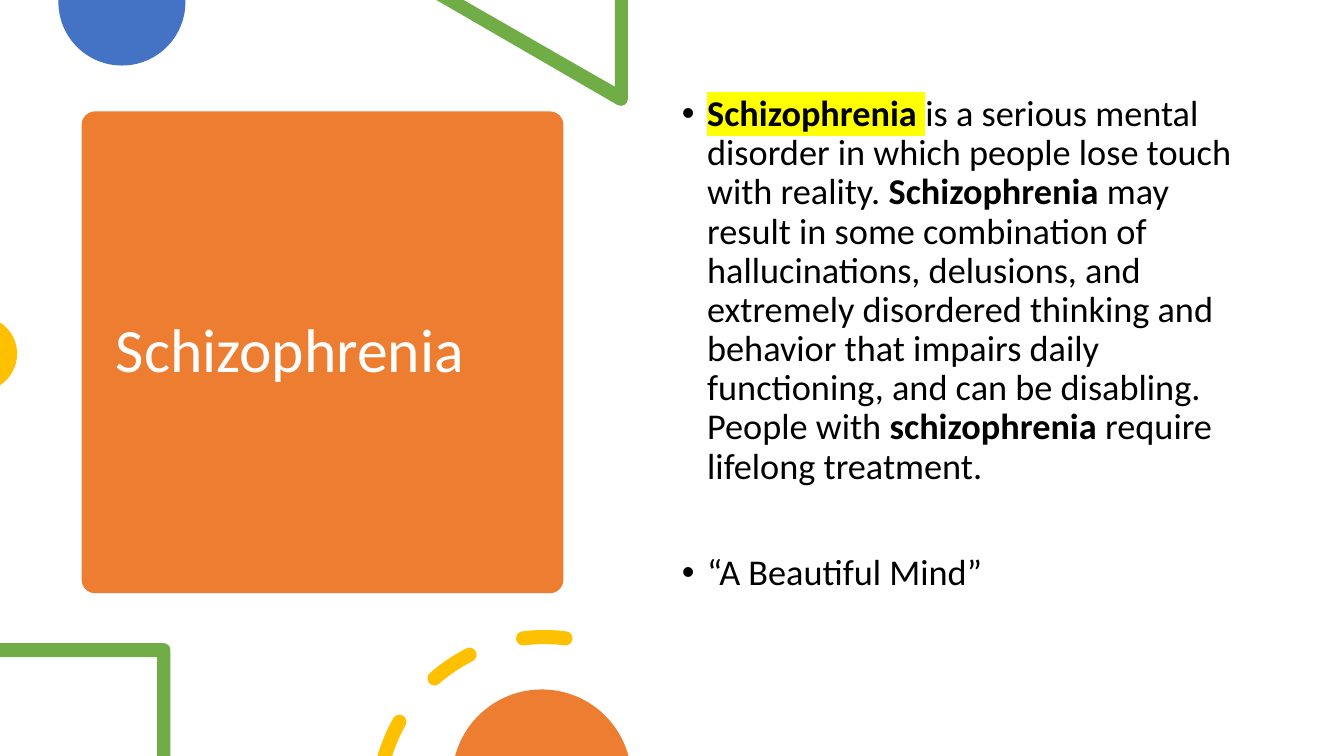
from math import ceil, cos, radians, sin, tan

from lxml import etree
from pptx import Presentation
from pptx import util as u
from pptx.dml.color import RGBColor
from pptx.enum import shapes, text
from pptx.oxml import ns

COLORS = {
    "orange": "ED7D31",
    "blue": "4472C4",
    "green": "70AD47",
    "gold": "FFC000",
    "white": "FFFFFF",
    "black": "000000",
    "yellow": "FFFF00",
}
COLUMNS, ROWS = 1333.33, 750  # fine square grid, 100 cells to the inch


def arc(x, y, radius, start, end):
    """Start point and Bézier curves (six numbers each), clockwise from the top."""
    count = ceil(abs(end - start) / 90)
    step = radians((end - start) / count)
    pull = 4 / 3 * tan(step / 4)

    def point(angle, reach):
        return (x + radius * (sin(angle) + reach * cos(angle)),
                y - radius * (cos(angle) - reach * sin(angle)))

    angles = [radians(start) + step * i for i in range(count)]
    curves = [point(a, pull) + point(a + step, -pull) + point(a + step, 0)
              for a in angles]
    return [point(radians(start), 0)] + curves


def add_text(paragraph, content, size=18, color="black", bold=False, highlight=None):
    run = paragraph.add_run()
    run.text = content
    run.font.size = u.Pt(size)
    run.font.bold = bold
    run.font.color.rgb = RGBColor.from_string(COLORS[color])
    if highlight:
        mark = etree.Element(ns.qn("a:highlight"))
        etree.SubElement(mark, ns.qn("a:srgbClr"), val=COLORS[highlight])
        run.font.fill._xPr.find(ns.qn("a:solidFill")).addnext(mark)
    run.font.name = "Calibri"


class SlideBuilder:
    def __init__(self, presentation):
        presentation.slide_width = self.length(COLUMNS)
        presentation.slide_height = self.length(ROWS)
        self.slide = presentation.slides.add_slide(presentation.slide_layouts[6])

    def length(self, cells):
        return u.Inches(cells / 100)

    def paint(self, shape, color):
        shape.shadow.inherit = False
        shape.fill.solid()
        shape.fill.fore_color.rgb = RGBColor.from_string(COLORS[color])
        shape.line.fill.background()

    def card(self, column, row, width, height, color, rounding):
        box = map(self.length, (column, row, width, height))
        shape = self.slide.shapes.add_shape(shapes.MSO_SHAPE.ROUNDED_RECTANGLE, *box)
        shape.adjustments[0] = rounding
        self.paint(shape, color)

    def outline(self, color, *contours):
        """Freeform from points (two numbers) and Bézier curves (six numbers)."""
        builder = None
        for start, *segments in contours:
            origin = [self.length(value) for value in start]
            if builder:
                builder.move_to(*origin)
            else:
                builder = self.slide.shapes.build_freeform(*origin)
            values = [self.length(value) for segment in segments for value in segment]
            builder.add_line_segments(list(zip(values[::2], values[1::2])), close=True)
        shape = builder.convert_to_shape()
        self.bend(shape, [segment for contour in contours for segment in contour[1:]])
        self.paint(shape, color)

    def bend(self, shape, segments):
        """Join the three points of each curve into one Bézier element."""
        lines = iter(list(shape._element.iter(ns.qn("a:lnTo"))))
        for segment in segments:
            line = next(lines)
            if len(segment) == 6:
                line.tag = ns.qn("a:cubicBezTo")
                for _ in range(2):
                    extra = next(lines)
                    line.append(extra[0])
                    extra.getparent().remove(extra)

    def text_box(self, column, row, width, height, anchor):
        box = map(self.length, (column, row, width, height))
        frame = self.slide.shapes.add_textbox(*box).text_frame
        frame.word_wrap = True
        frame.vertical_anchor = anchor
        return frame

    def title(self, column, row, width, height, content):
        frame = self.text_box(column, row, width, height, text.MSO_ANCHOR.MIDDLE)
        frame.paragraphs[0].line_spacing = 0.9
        add_text(frame.paragraphs[0], content, size=44, color="white")

    def bullets(self, column, row, width, height, items, gap):
        frame = self.text_box(column, row, width, height, text.MSO_ANCHOR.TOP)
        for index, runs in enumerate(items):
            paragraph = frame.add_paragraph() if index else frame.paragraphs[0]
            paragraph.line_spacing = 0.9
            paragraph.space_before = u.Pt(gap if index else 0)
            properties = paragraph._p.get_or_add_pPr()
            properties.set("marL", str(self.length(25)))
            properties.set("indent", str(-self.length(25)))
            etree.SubElement(properties, ns.qn("a:buFont"), typeface="Arial")
            etree.SubElement(properties, ns.qn("a:buChar"), char="•")
            for content, style in runs:
                add_text(paragraph, content, size=25.9, **style)


def ring_dash(start, end, cut=None):
    """Dash on the ring, round at its end and, unless cut, at its start."""
    x, y, radius, half = 540, 797, 165, 7

    def cap(angle, turn):
        spot = arc(x, y, radius, angle, angle + 1)[0]
        return arc(*spot, half, angle + turn, angle + turn + 180)[1:]

    inner_start = start if cut is None else cut
    dash = arc(x, y, radius + half, start, end) + cap(end, 0)
    dash += arc(x, y, radius - half, end, inner_start)[1:]
    return dash + (cap(start, 180) if cut is None else [])


def main():
    presentation = Presentation()
    builder = SlideBuilder(presentation)

    # Title card
    builder.card(81, 110.5, 478, 478, "orange", rounding=0.028)
    builder.title(105, 122, 431, 456, "Schizophrenia")

    # Decorations along the top and left edges
    builder.outline("blue", [(184, 0), *arc(121, 2, 63, 90, 270), (58, 0)])
    builder.outline("green", [(623, 0), *arc(616, 98, 7, 90, 210),
                              (433, 0), (460, 0), (610, 86), (610, 0)])
    builder.outline("gold", arc(-20, 351, 37, 32.7, 147.3))

    # Description
    bold = {"bold": True}
    description = [
        ("Schizophrenia", {"bold": True, "highlight": "yellow"}),
        (" ", {"highlight": "yellow"}),
        ("is a serious mental disorder in which people lose touch with reality. ", {}),
        ("Schizophrenia", bold),
        (" may result in some combination of hallucinations, delusions, and "
         "extremely disordered thinking and behavior that impairs daily "
         "functioning, and can be disabling. People with ", {}),
        ("schizophrenia", bold),
        (" require lifelong treatment.", {}),
    ]
    film = [("“A Beautiful Mind”", {})]
    builder.bullets(666.7, 89.6, 575, 535, [description, film], gap=48)

    # Decorations along the bottom edge
    builder.outline("green", [(0, 638), *arc(162, 645, 7, 0, 90),
                              (169, 750), (156, 750), (156, 652), (0, 652)])
    builder.outline("gold", ring_dash(-74.1, -60.6, cut=-72.7),
                    ring_dash(-41.3, -26.7), ring_dash(-7.3, 7.3))
    builder.outline("orange", arc(537.5, 773, 89, -75, 75))

    presentation.save("out.pptx")


if __name__ == "__main__":
    main()
